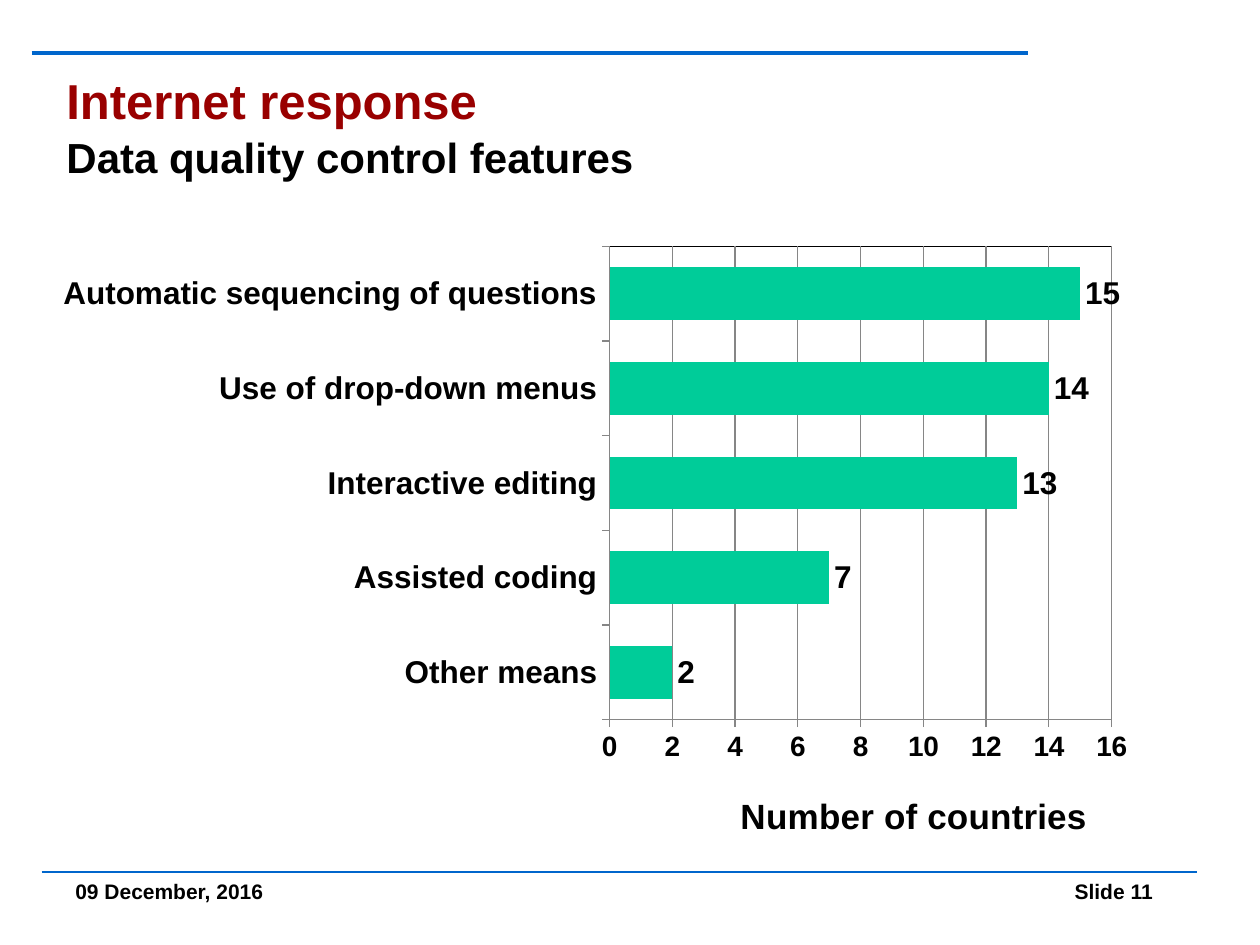
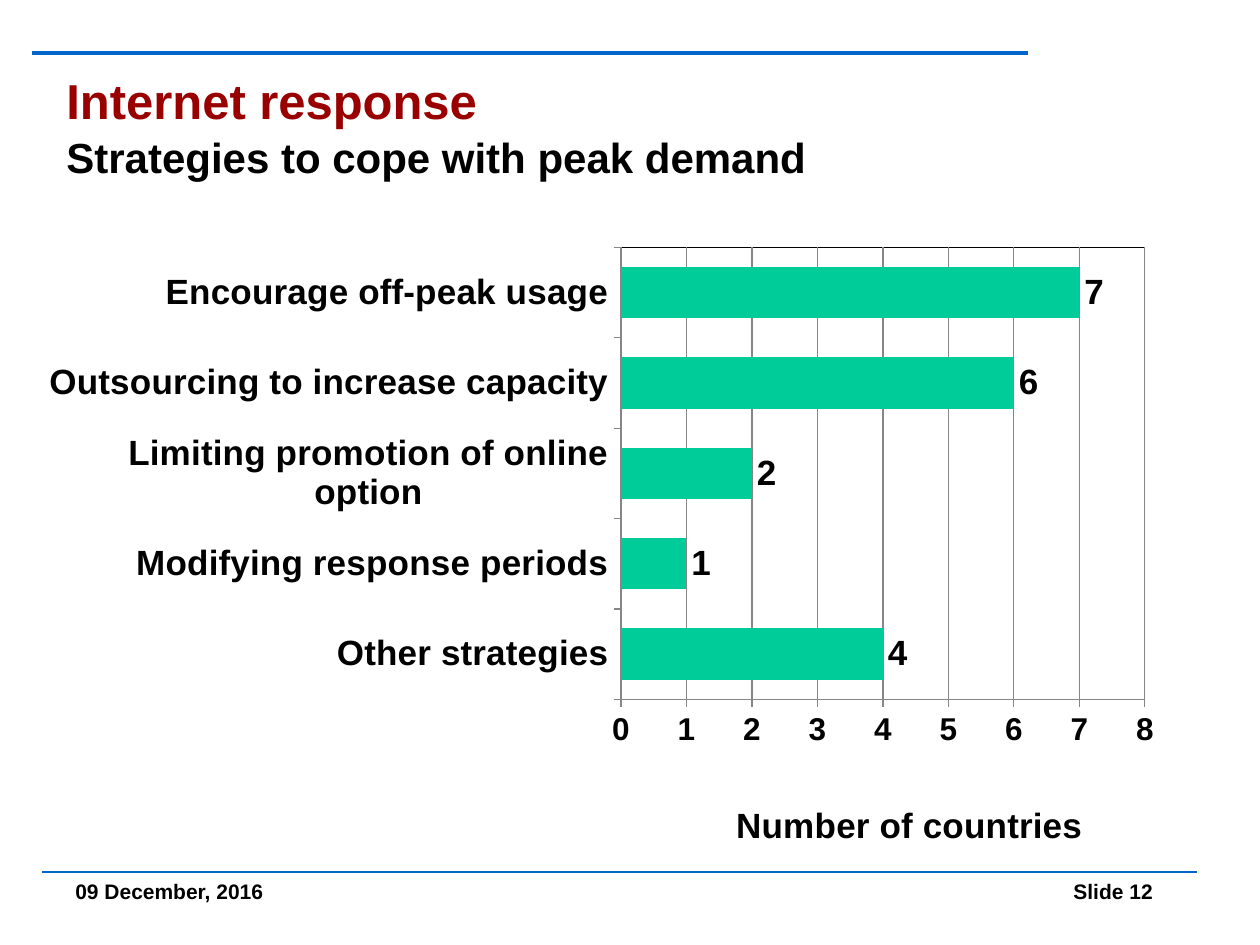
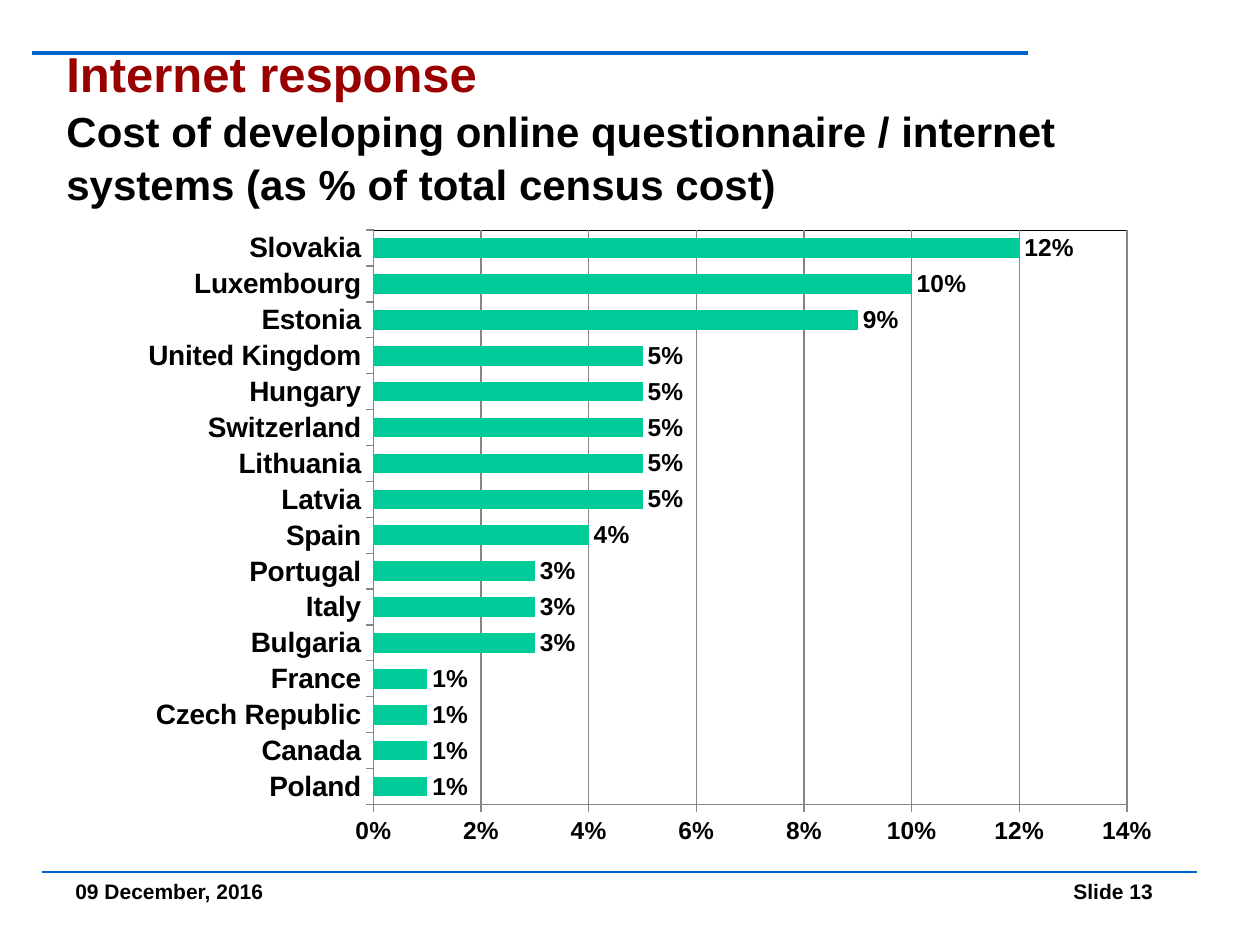
from lxml.etree import SubElement
from pptx import Presentation
from pptx.chart.data import CategoryChartData
from pptx.dml.color import RGBColor
from pptx.enum.chart import XL_CHART_TYPE, XL_LABEL_POSITION, XL_TICK_MARK
from pptx.enum.text import MSO_ANCHOR, PP_ALIGN
from pptx.oxml import parse_xml
from pptx.oxml.ns import nsdecls, qn
from pptx.util import Cm, Pt

FONT = "Arial"
BLACK = "000000"
RED = "990000"
BLUE = "0066CC"
GREEN = "00CC99"
GREY = "868686"
FIRST_NUMBER = 11


def color(value):
    """Turn a hex string into a colour."""
    return RGBColor.from_string(value)


def style_font(font, size, fill=BLACK, bold=True):
    """Set typeface, size, colour and weight of a font."""
    font.name, font.size, font.bold = FONT, Pt(size), bold
    font.color.rgb = color(fill)


def write(para, text, **style):
    """Add a formatted run of text to a paragraph."""
    span = para.add_run()
    span.text = text
    style_font(span.font, **style)


def draw_line(line, fill, width):
    """Set colour and width of a line."""
    line.color.rgb = color(fill)
    line.width = Pt(width)


def set_layout(parent, index, **fractions):
    """Give a chart part a manual layout in fractions of the chart."""
    for old in parent.findall(qn("c:layout")):
        parent.remove(old)
    layout = parse_xml(f"<c:layout {nsdecls('c')}><c:manualLayout/></c:layout>")
    for name, value in fractions.items():
        SubElement(layout[0], qn(f"c:{name}")).set("val", str(value))
    parent.insert(index, layout)


class SlideBuilder:
    """Hold the deck style and the current slide."""

    def __init__(self):
        """Start an empty deck."""
        self.deck = Presentation()
        self.deck.slide_width, self.deck.slide_height = Cm(25.4), Cm(19.05)
        self.page = None

    def add_page(self, number, subtitle):
        """Add a slide with its rules, footer and title."""
        self.page = self.deck.slides.add_slide(self.deck.slide_layouts[6])
        self.add_rule(0.84, 24.13, 17.58, 1.5)
        self.add_rule(0.64, 20.73, 1.07, 2.25)
        write(self.add_box(18.21, 17.58, 5.28, 1.27, align=PP_ALIGN.RIGHT), f"Slide {number}", size=12)
        write(self.add_box(1.27, 17.58, 5.28, 1.27), "09 December, 2016", size=12)
        para = self.add_box(1.09, 1.32, 23.27, 2.39, anchor=MSO_ANCHOR.MIDDLE)
        para.line_spacing = 1.05
        write(para, "Internet response", size=28, fill=RED)
        para.add_line_break()
        write(para, subtitle, size=24)

    def add_rule(self, left, right, top, width):
        """Draw a horizontal blue line."""
        rule = self.page.shapes.add_connector(1, Cm(left), Cm(top), Cm(right), Cm(top))
        draw_line(rule.line, BLUE, width)
        SubElement(rule.element.spPr, qn("a:effectLst"))

    def add_box(self, left, top, width, height, align=PP_ALIGN.LEFT, anchor=MSO_ANCHOR.TOP):
        """Add a text box and return its first paragraph."""
        box = self.page.shapes.add_textbox(Cm(left), Cm(top), Cm(width), Cm(height))
        frame = box.text_frame
        frame.word_wrap = True
        frame.vertical_anchor = anchor
        frame.paragraphs[0].alignment = align
        return frame.paragraphs[0]

    def add_bars(self, values, area, plot_area, step, limit, gap, sizes, caption_at=None, number_format="General"):
        """Add a bar chart, its values listed from top to bottom."""
        data = CategoryChartData(number_format=number_format)
        data.categories = list(reversed(values))
        data.add_series("Number of countries", list(reversed(values.values())))
        frame = self.page.shapes.add_chart(XL_CHART_TYPE.BAR_CLUSTERED, *map(Cm, area), data)
        chart = frame.chart
        width, height = area[2:]
        category_size, value_size, label_size = sizes
        style_font(chart.font, 10, bold=False)
        chart.has_legend = False
        chart.has_title = caption_at is not None
        if caption_at:
            write(chart.chart_title.text_frame.paragraphs[0], "Number of countries", size=20)
            left, top = caption_at
            set_layout(chart.chart_title.element, 1, xMode="edge", yMode="edge",
                       x=left / width, y=top / height)

        for axis, size in ((chart.category_axis, category_size), (chart.value_axis, value_size)):
            style_font(axis.tick_labels.font, size)
            axis.major_tick_mark = XL_TICK_MARK.OUTSIDE
            axis.minor_tick_mark = XL_TICK_MARK.NONE
            draw_line(axis.format.line, GREY, 0.75)
        scale = chart.value_axis
        scale.minimum_scale, scale.maximum_scale, scale.major_unit = 0, limit, step
        scale.has_major_gridlines = True
        draw_line(scale.major_gridlines.format.line, GREY, 0.75)
        scale.tick_labels.number_format = number_format
        scale.tick_labels.number_format_is_linked = False

        plot = chart.plots[0]
        plot.gap_width = gap
        plot.vary_by_categories = False
        fill = plot.series[0].format.fill
        fill.solid()
        fill.fore_color.rgb = color(GREEN)
        plot.has_data_labels = True
        labels = plot.data_labels
        labels.show_value = True
        labels.position = XL_LABEL_POSITION.OUTSIDE_END
        labels.number_format = number_format
        labels.number_format_is_linked = False
        style_font(labels.font, label_size)

        left, top, plot_width, plot_height = plot_area
        region = chart.element.find(".//" + qn("c:plotArea"))
        set_layout(region, 0, layoutTarget="inner", xMode="edge", yMode="edge",
                   x=left / width, y=top / height, w=plot_width / width, h=plot_height / height)
        region.append(parse_xml(
            f'<c:spPr {nsdecls("c", "a")}><a:noFill/><a:ln w="9525"><a:solidFill>'
            f'<a:srgbClr val="{BLACK}"/></a:solidFill></a:ln></c:spPr>'))


PAGES = [
    ("Data quality control features", dict(
        values={"Automatic sequencing of questions": 15, "Use of drop-down menus": 14,
                "Interactive editing": 13, "Assisted coding": 7, "Other means": 2},
        area=(0.71, 4.32, 22.4, 12.8), plot_area=(11.58, 0.65, 10.12, 9.54),
        step=2, limit=16, gap=80, sizes=(18, 16, 18), caption_at=(14.09, 11.55))),
    ("Strategies to cope with peak demand", dict(
        values={"Encourage off-peak usage": 7, "Outsourcing to increase capacity": 6,
                "Limiting promotion of online option": 2, "Modifying response periods": 1,
                "Other strategies": 4},
        area=(0.51, 4.32, 23.27, 13.21), plot_area=(12.01, 0.67, 10.56, 9.11),
        step=1, limit=8, gap=76, sizes=(20, 18, 20), caption_at=(14.2, 11.73))),
    ("Cost of developing online questionnaire / internet systems (as % of total census cost)", dict(
        values={"Slovakia": 0.12, "Luxembourg": 0.1, "Estonia": 0.09, "United Kingdom": 0.05,
                "Hungary": 0.05, "Switzerland": 0.05, "Lithuania": 0.05, "Latvia": 0.05,
                "Spain": 0.04, "Portugal": 0.03, "Italy": 0.03, "Bulgaria": 0.03,
                "France": 0.01, "Czech Republic": 0.01, "Canada": 0.01, "Poland": 0.01},
        area=(0.51, 3.94, 23.01, 13.79), plot_area=(7.02, 0.7, 15.19, 11.58),
        step=0.02, limit=0.14, gap=83, sizes=(16, 14, 14), number_format="0%")),
]


def main():
    """Build the slides and save the deck."""
    builder = SlideBuilder()
    for number, (subtitle, bars) in enumerate(PAGES, FIRST_NUMBER):
        builder.add_page(number, subtitle)
        builder.add_bars(**bars)
    builder.deck.save("out.pptx")


if __name__ == "__main__":
    main()
